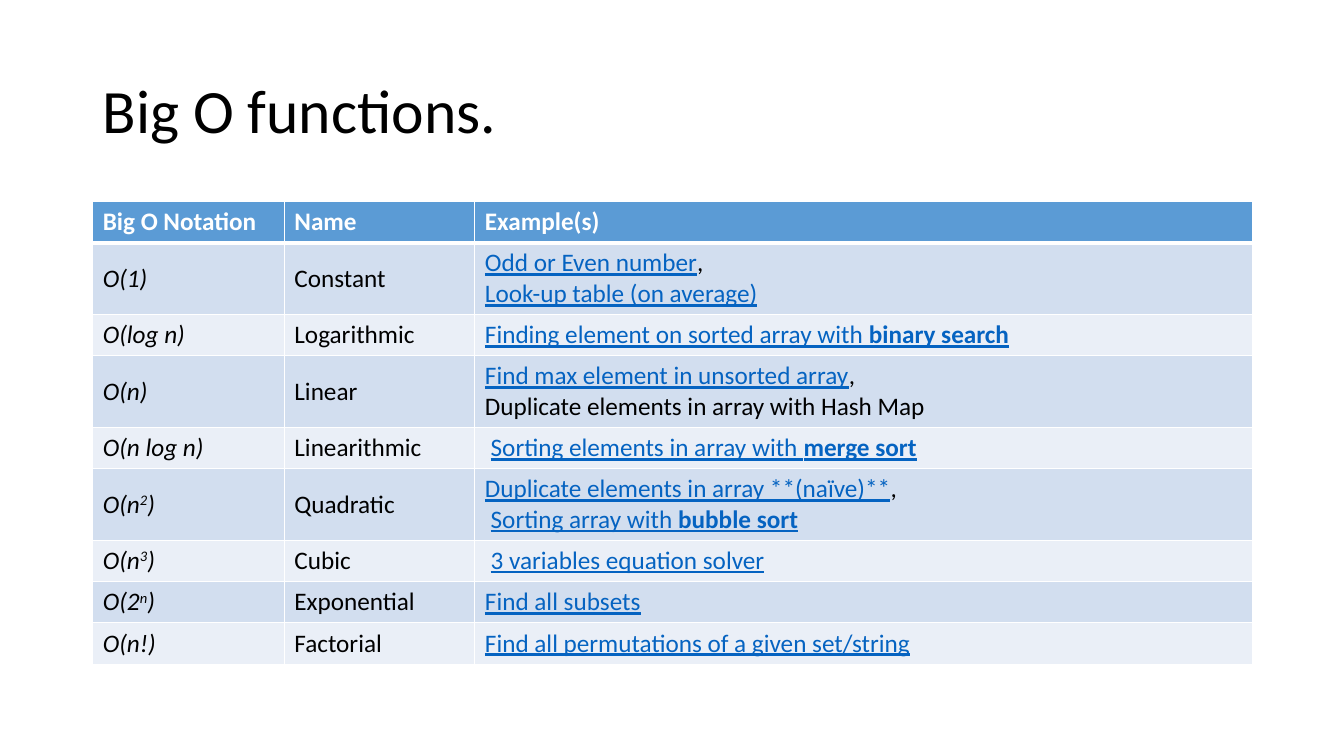
from lxml import etree
from pptx import Presentation
from pptx.dml.color import RGBColor
from pptx.enum.text import MSO_ANCHOR as Anchor
from pptx.oxml.ns import qn
from pptx.util import Inches, Pt

TITLE = "Big O functions."
HEADS = ["Big O Notation", "Name", "Example(s)"]
# Notation (base, power, end), name, and example lines made of (text, style).
# Styles: "" plain, "u" link look, "b" bold, "i" italic, "p" power, "w" white
ROWS = [
    (("O(1)",), "Constant",
     [[("Odd or Even number", "u"), (",", "")],
      [("Look-up table (on average)", "u")]]),
    (("O(log n)",), "Logarithmic",
     [[("Finding element on sorted array with ", "u"), ("binary search", "ub")]]),
    (("O(n)",), "Linear",
     [[("Find max element in unsorted array", "u"), (",", "")],
      [("Duplicate elements in array with Hash Map", "")]]),
    (("O(n log n)",), "Linearithmic",
     [[(" ", ""), ("Sorting elements in array with ", "u"), ("merge sort", "ub")]]),
    (("O(n", "2", ")"), "Quadratic",
     [[("Duplicate elements in array **(naïve)**", "u"), (",", "")],
      [(" ", ""), ("Sorting array with ", "u"), ("bubble sort", "ub")]]),
    (("O(n", "3", ")"), "Cubic",
     [[(" ", ""), ("3 variables equation solver", "u")]]),
    (("O(2", "n", ")"), "Exponential", [[("Find all subsets", "u")]]),
    (("O(n!)",), "Factorial",
     [[("Find all permutations of a given set/string", "u")]]),
]

BLACK = RGBColor(0x00, 0x00, 0x00)
WHITE = RGBColor(0xFF, 0xFF, 0xFF)
LINK = RGBColor(0x05, 0x63, 0xC1)
HEAD = RGBColor(0x5B, 0x9B, 0xD5)
BANDS = [RGBColor(0xD2, 0xDE, 0xEF), RGBColor(0xEA, 0xEF, 0xF7)]
FONT = "Calibri"
LEFT, WIDTH = 0.92, 11.5
COLS = [1.9, 1.89, 7.71]
ROW, LINE = 0.41, 0.3


def style_run(run, style, size=18):
    font = run.font
    font.name, font.size = FONT, Pt(size)
    font.bold, font.italic = "b" in style, "i" in style
    font.underline = "u" in style
    font.color.rgb = LINK if "u" in style else WHITE if "w" in style else BLACK
    if "p" in style:
        font._element.set("baseline", "30000")


def set_edges(cell, top, bottom):
    """Draw white cell borders; top and bottom are widths in points."""
    props = cell._tc.get_or_add_tcPr()
    for side, width in zip("LRTB", (1, 1, top, bottom)):
        edge = etree.SubElement(props, qn(f"a:ln{side}"), w=str(Pt(width)))
        fill = etree.SubElement(edge, qn("a:solidFill"))
        etree.SubElement(fill, qn("a:srgbClr"), val=str(WHITE))


def fill_cell(cell, lines, color, top=1, bottom=1):
    set_edges(cell, top, bottom)
    cell.fill.solid()
    cell.fill.fore_color.rgb = color
    cell.vertical_anchor = Anchor.MIDDLE
    para = cell.text_frame.paragraphs[0]
    for num, line in enumerate(lines):
        if num:
            para.add_line_break()
        for text, style in line:
            run = para.add_run()
            run.text = text
            style_run(run, style)


def add_title(slide):
    box = slide.shapes.add_textbox(Inches(LEFT), Inches(0.4),
                                   Inches(WIDTH), Inches(1.45))
    frame = box.text_frame
    frame.word_wrap = True
    frame.vertical_anchor = Anchor.MIDDLE
    frame.text = TITLE
    para = frame.paragraphs[0]
    para.line_spacing = 0.9
    style_run(para.runs[0], "", 44)


def add_grid(slide):
    highs = [ROW] + [ROW + LINE * (len(lines) - 1) for _, _, lines in ROWS]
    table = slide.shapes.add_table(len(highs), len(COLS), Inches(LEFT), Inches(2),
                                   Inches(WIDTH), Inches(sum(highs))).table
    table.first_row = table.horz_banding = False
    for col, width in zip(table.columns, COLS):
        col.width = Inches(width)
    for row, high in zip(table.rows, highs):
        row.height = Inches(high)
    for col, text in enumerate(HEADS):
        fill_cell(table.cell(0, col), [[(text, "wb")]], HEAD, bottom=3)
    for num, (parts, name, lines) in enumerate(ROWS):
        order = list(zip(parts, ("i", "ip", "i")))
        for col, body in enumerate(([order], [[(name, "")]], lines)):
            fill_cell(table.cell(num + 1, col), body, BANDS[num % 2],
                      top=1 if num else 3)


def main():
    deck = Presentation()
    deck.slide_width, deck.slide_height = Inches(13.33), Inches(7.5)
    slide = deck.slides.add_slide(deck.slide_layouts[6])
    add_title(slide)
    add_grid(slide)
    deck.save("out.pptx")


if __name__ == "__main__":
    main()
